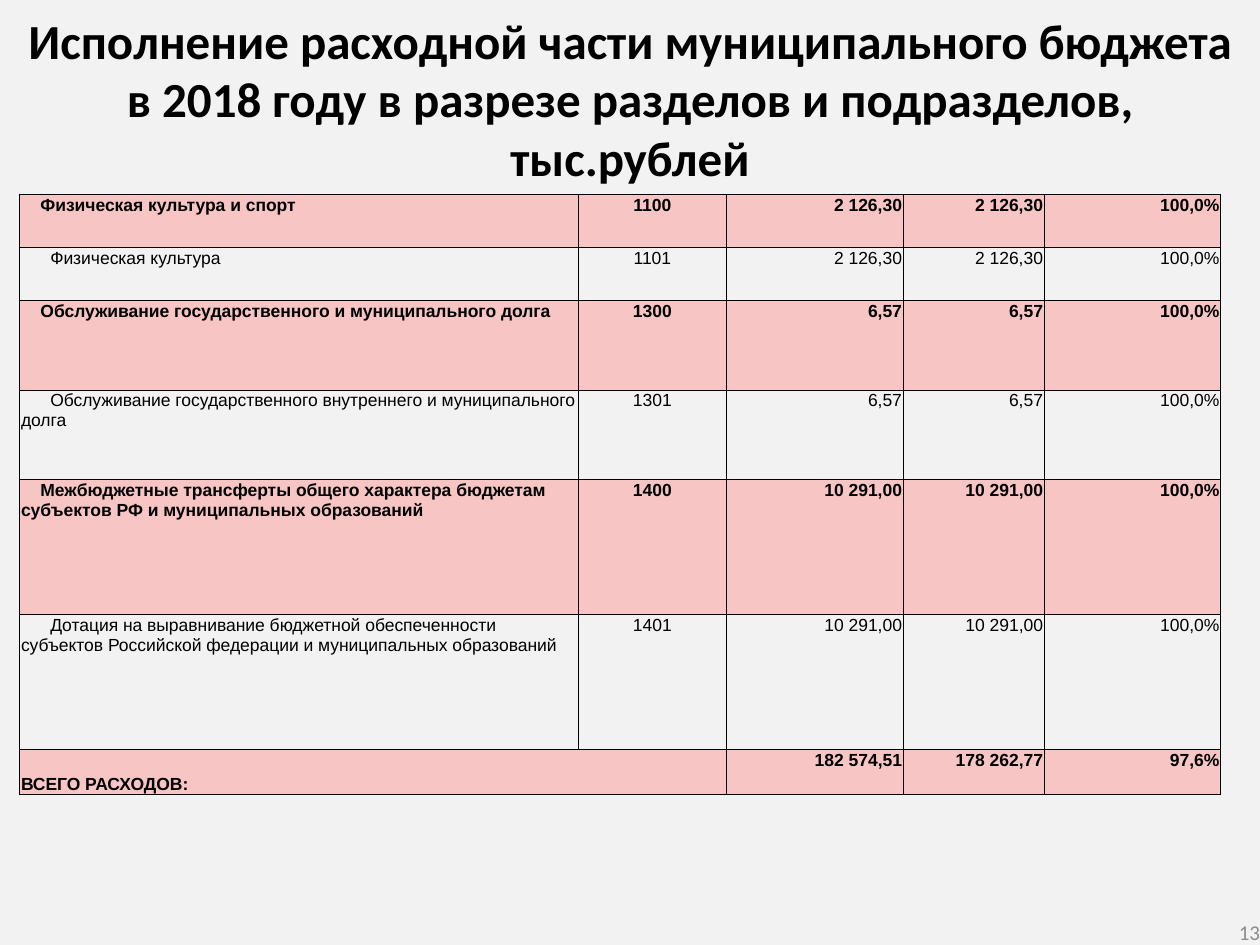
from pptx import Presentation
from pptx.dml.color import RGBColor
from pptx.enum.text import MSO_ANCHOR as Anchor, MSO_AUTO_SIZE as AutoSize, PP_ALIGN as Align
from pptx.oxml.ns import qn
from pptx.util import Pt
from lxml.etree import SubElement

BLACK = RGBColor(0x00, 0x00, 0x00)
GRAY = RGBColor(0x8C, 0x8C, 0x8C)
BACKGROUND = RGBColor(0xF2, 0xF2, 0xF2)
PINK = RGBColor(0xF7, 0xC5, 0xC4)

TITLE = ("Исполнение расходной части муниципального бюджета "
         "в 2018 году в разрезе разделов и подразделов, тыс.рублей")
COLUMN_WIDTHS = (319, 85, 100.8, 80.6, 100.8)
COLUMN_ALIGNMENTS = (Align.LEFT, Align.CENTER, Align.RIGHT, Align.RIGHT, Align.RIGHT)
SECTION_INDENT, SUBSECTION_INDENT = 11.1, 16.7
TOTAL = "ВСЕГО РАСХОДОВ:"

# Row height, then name, code, plan, actual and percentage
BUDGET_ROWS = (
    (30.3, "Физическая культура и спорт", "1100", "2 126,30", "2 126,30", "100,0%"),
    (30.3, "Физическая культура", "1101", "2 126,30", "2 126,30", "100,0%"),
    (51.3, "Обслуживание государственного и муниципального долга",
     "1300", "6,57", "6,57", "100,0%"),
    (51.3, "Обслуживание государственного внутреннего и муниципального долга",
     "1301", "6,57", "6,57", "100,0%"),
    (77.1, "Межбюджетные трансферты общего характера бюджетам субъектов РФ "
     "и муниципальных образований", "1400", "10 291,00", "10 291,00", "100,0%"),
    (77.1, "Дотация на выравнивание бюджетной обеспеченности субъектов Российской "
     "федерации и муниципальных образований", "1401", "10 291,00", "10 291,00", "100,0%"),
    (25.4, TOTAL, "", "182 574,51", "178 262,77", "97,6%"),
)


def set_margins(target, left, top, right, bottom):
    target.margin_left, target.margin_top = Pt(left), Pt(top)
    target.margin_right, target.margin_bottom = Pt(right), Pt(bottom)


def format_paragraph(paragraph, alignment, font_name, size, color, bold=False):
    paragraph.alignment = alignment
    font = paragraph.font
    font.name, font.size, font.bold = font_name, Pt(size), bold
    font.color.rgb = color


def set_borders(cell):
    """Draw a thin black line on all four sides, ahead of the cell's fill."""
    properties = cell._tc.get_or_add_tcPr()
    for position, side in enumerate(("lnL", "lnR", "lnT", "lnB")):
        line = SubElement(properties, qn(f"a:{side}"), w=str(Pt(0.5)))
        fill = SubElement(line, qn("a:solidFill"))
        SubElement(fill, qn("a:srgbClr"), val=str(BLACK))
        properties.insert(position, line)


def format_title(slide):
    title = slide.shapes.title
    title.left, title.top, title.width, title.height = Pt(0), Pt(0), Pt(720), Pt(111)
    frame = title.text_frame
    frame.text = TITLE
    frame.word_wrap = True
    frame.auto_size = AutoSize.NONE
    frame.vertical_anchor = Anchor.TOP
    set_margins(frame, 7.2, 5.76, 7.2, 3.6)
    format_paragraph(frame.paragraphs[0], Align.CENTER, "Calibri", 28, BLACK, bold=True)


def add_page_number(slide, number):
    box = slide.shapes.add_textbox(Pt(552), Pt(525), Pt(168), Pt(15))
    frame = box.text_frame
    frame.text = number
    frame.word_wrap = True
    frame.vertical_anchor = Anchor.MIDDLE
    set_margins(frame, 0, 0, 0, 0)
    format_paragraph(frame.paragraphs[0], Align.RIGHT, "Calibri", 12, GRAY)


def fill_cell(cell, text, alignment, is_section):
    cell.text = text
    set_margins(cell, 0.72, 0.72, 0.72, 0)
    format_paragraph(cell.text_frame.paragraphs[0], alignment, "Arial", 10, BLACK, is_section)
    if is_section:
        cell.fill.solid()
        cell.fill.fore_color.rgb = PINK
    else:
        cell.fill.background()
    set_borders(cell)


def indent_first_line(cell, indent):
    properties = cell.text_frame.paragraphs[0]._p.get_or_add_pPr()
    properties.set("marL", "0")
    properties.set("indent", str(Pt(indent)))


def add_budget_table(slide):
    heights = [row[0] for row in BUDGET_ROWS]
    table = slide.shapes.add_table(
        len(BUDGET_ROWS), len(COLUMN_WIDTHS), Pt(11.3), Pt(111),
        Pt(sum(COLUMN_WIDTHS)), Pt(sum(heights))).table
    table.first_row = table.horz_banding = False
    for column, width in zip(table.columns, COLUMN_WIDTHS):
        column.width = Pt(width)
    for row, (height, *texts) in zip(table.rows, BUDGET_ROWS):
        row.height = Pt(height)
        name, code = texts[:2]
        is_section = name == TOTAL or code.endswith("00")
        for cell, text, alignment in zip(row.cells, texts, COLUMN_ALIGNMENTS):
            fill_cell(cell, text, alignment, is_section)
        if name != TOTAL:
            indent_first_line(row.cells[0], SECTION_INDENT if is_section else SUBSECTION_INDENT)
    last = len(BUDGET_ROWS) - 1
    total_cell = table.cell(last, 0)
    total_cell.merge(table.cell(last, 1))
    total_cell.vertical_anchor = Anchor.BOTTOM


def main():
    presentation = Presentation()
    presentation.slide_width, presentation.slide_height = Pt(720), Pt(540)
    slide = presentation.slides.add_slide(presentation.slide_layouts.get_by_name("Title Only"))
    slide.background.fill.solid()
    slide.background.fill.fore_color.rgb = BACKGROUND
    format_title(slide)
    add_page_number(slide, "13")
    add_budget_table(slide)
    presentation.save("out.pptx")


if __name__ == "__main__":
    main()
